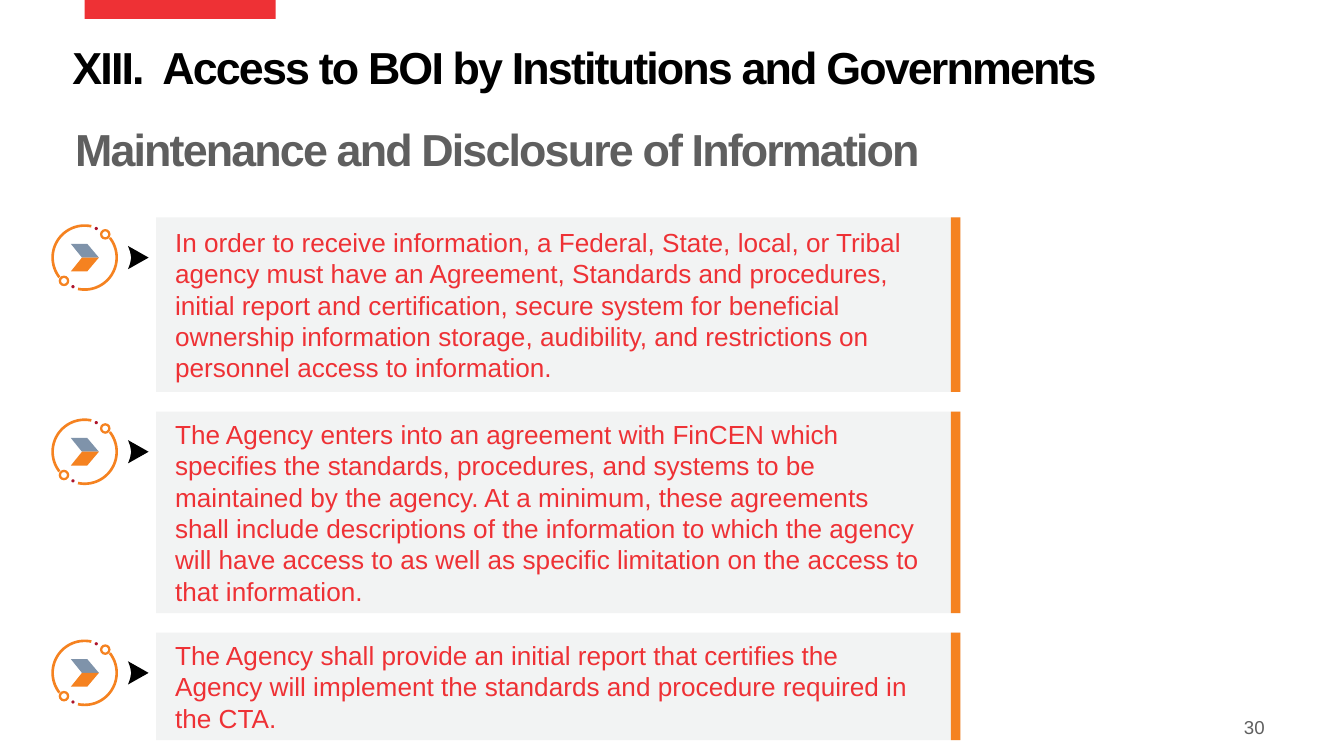
import math
from dataclasses import dataclass

from pptx import Presentation
from pptx import util as u
from pptx.dml.color import RGBColor
from pptx.enum import shapes, text


@dataclass(frozen=True)
class Theme:
    """Colours, font and type sizes of the slide."""
    red: str = "EE3135"
    orange: str = "F58220"
    crimson: str = "AE132A"
    slate: str = "7F93AA"
    panel: str = "F2F3F3"
    gray: str = "5F5F5F"
    black: str = "000000"
    font: str = "Arial"
    heading: int = 24
    body: int = 14
    small: int = 10


THEME = Theme()
REQUIREMENTS = [
    (3.3, "In order to receive information, a Federal, State, local, or Tribal agency must have "
          "an Agreement, Standards and procedures, initial report and certification, secure "
          "system for beneficial ownership information storage, audibility, and restrictions on "
          "personnel access to information."),
    (3.81, "The Agency enters into an agreement with FinCEN which specifies the standards, "
           "procedures, and systems to be maintained by the agency. At a minimum, these "
           "agreements shall include descriptions of the information to which the agency will "
           "have access to as well as specific limitation on the access to that information."),
    (2.03, "The Agency shall provide an initial report that certifies the Agency will implement "
           "the standards and procedure required in the CTA."),
]


def paint(shape, color):
    """Give a shape a flat fill with no outline or shadow."""
    shape.shadow.inherit = False
    shape.fill.solid()
    shape.fill.fore_color.rgb = RGBColor.from_string(color)
    shape.line.fill.background()
    return shape


def add_preset(slide, kind, box, color):
    """Add a painted preset shape in a box given in centimetres."""
    return paint(slide.shapes.add_shape(kind, *map(u.Cm, box)), color)


def add_outline(slide, center, offsets, color):
    """Add a painted closed outline from offsets around a centre."""
    points = [(u.Cm(center[0] + x), u.Cm(center[1] + y)) for x, y in offsets]
    builder = slide.shapes.build_freeform(*points[0], scale=1.0)
    builder.add_line_segments(points[1:], close=True)
    return paint(builder.convert_to_shape(), color)


def write(shape, words, size, color, bold=False, align=text.PP_ALIGN.LEFT,
          anchor=text.MSO_ANCHOR.TOP, insets=(0, 0, 0, 0), leading=None, tracking=None):
    """Write one formatted paragraph into a shape."""
    frame = shape.text_frame
    frame.word_wrap = True
    frame.vertical_anchor = anchor
    (frame.margin_left, frame.margin_top,
     frame.margin_right, frame.margin_bottom) = map(u.Cm, insets)
    paragraph = frame.paragraphs[0]
    paragraph.alignment = align
    if leading:
        paragraph.line_spacing = leading
    run = paragraph.add_run()
    run.text = words
    run.font.name = THEME.font
    run.font.size = u.Pt(size)
    run.font.bold = bold
    run.font.color.rgb = RGBColor.from_string(color)
    if tracking:
        run.font._element.set("spc", str(round(tracking * 100)))


def add_label(slide, box, words, size, color, **style):
    """Add a text box in a box given in centimetres."""
    write(slide.shapes.add_textbox(*map(u.Cm, box)), words, size, color, **style)


def add_header(slide, left, top, width):
    """Place the red tab, the section heading and the subheading."""
    add_preset(slide, shapes.MSO_SHAPE.RECTANGLE, (left + 0.23, top, 3.61, 0.36), THEME.red)
    headings = [
        (0, 0.86, "XIII.  Access to BOI by Institutions and Governments", THEME.black),
        (0.05, 2.41, "Maintenance and Disclosure of Information", THEME.gray),
    ]
    for shift, drop, words, color in headings:
        add_label(slide, (left + shift, top + drop, width, 1.27), words, THEME.heading, color,
                  bold=True, leading=0.9, tracking=-1)


def add_orbit_icon(slide, center):
    """Place the ringed chevron, whose ring parts are point-symmetric."""
    outer, inner = 0.63, 0.58
    x, y = center
    for sign, chevron in ((1, THEME.slate), (-1, THEME.orange)):
        angles = [math.radians(a) for a in range(142, 285, 4)]
        edge = [(outer, a) for a in angles] + [(inner, a) for a in reversed(angles)]
        add_outline(slide, center, [(sign * r * math.cos(a), sign * r * math.sin(a))
                                    for r, a in edge], THEME.orange)
        node = add_preset(slide, shapes.MSO_SHAPE.DONUT,
                          (x + sign * 0.39 - 0.1, y - sign * 0.44 - 0.1, 0.2, 0.2),
                          THEME.orange)
        node.adjustments[0] = 0.22
        add_preset(slide, shapes.MSO_SHAPE.OVAL,
                   (x + sign * 0.22 - 0.03, y - sign * 0.55 - 0.03, 0.06, 0.06),
                   THEME.crimson)
        add_outline(slide, center, [(-0.26, -sign * 0.26), (0.05, -sign * 0.26),
                                    (0.27, 0), (-0.05, 0)], chevron)


def add_requirement(slide, left, top, width, height, words):
    """Place one requirement: icon, pointer, panel and accent bar."""
    middle = top + 0.76
    add_orbit_icon(slide, (left + 0.76, middle))
    add_outline(slide, (left + 1.58, middle),
                [(0, -0.22), (0.39, 0), (0, 0.22), (0.04, 0.11), (0.06, 0), (0.04, -0.11)],
                THEME.black)
    panel = add_preset(slide, shapes.MSO_SHAPE.RECTANGLE,
                       (left + 2.11, top, width - 2.11, height), THEME.panel)
    write(panel, words, THEME.body, THEME.red, anchor=text.MSO_ANCHOR.MIDDLE,
          insets=(0.36, 0.08, 0.76, 0.08))
    add_preset(slide, shapes.MSO_SHAPE.RECTANGLE,
               (left + width - 0.18, top, 0.18, height), THEME.orange)


def add_requirements(slide, left, top, width, gap):
    """Stack the requirements with equal gaps."""
    for height, words in REQUIREMENTS:
        add_requirement(slide, left, top, width, height, words)
        top += height + gap


def main():
    """Build the slide and save it."""
    deck = Presentation()
    deck.slide_width, deck.slide_height = u.Cm(25.4), u.Cm(14.29)
    slide = deck.slides.add_slide(deck.slide_layouts[6])
    add_header(slide, 1.37, 0, 22.33)
    add_requirements(slide, 0.84, 4.11, 17.31, 0.37)
    add_label(slide, (21.64, 13.46, 2.26, 0.56), "30", THEME.small, THEME.gray,
              align=text.PP_ALIGN.RIGHT, anchor=text.MSO_ANCHOR.MIDDLE)
    deck.save("out.pptx")


if __name__ == "__main__":
    main()
